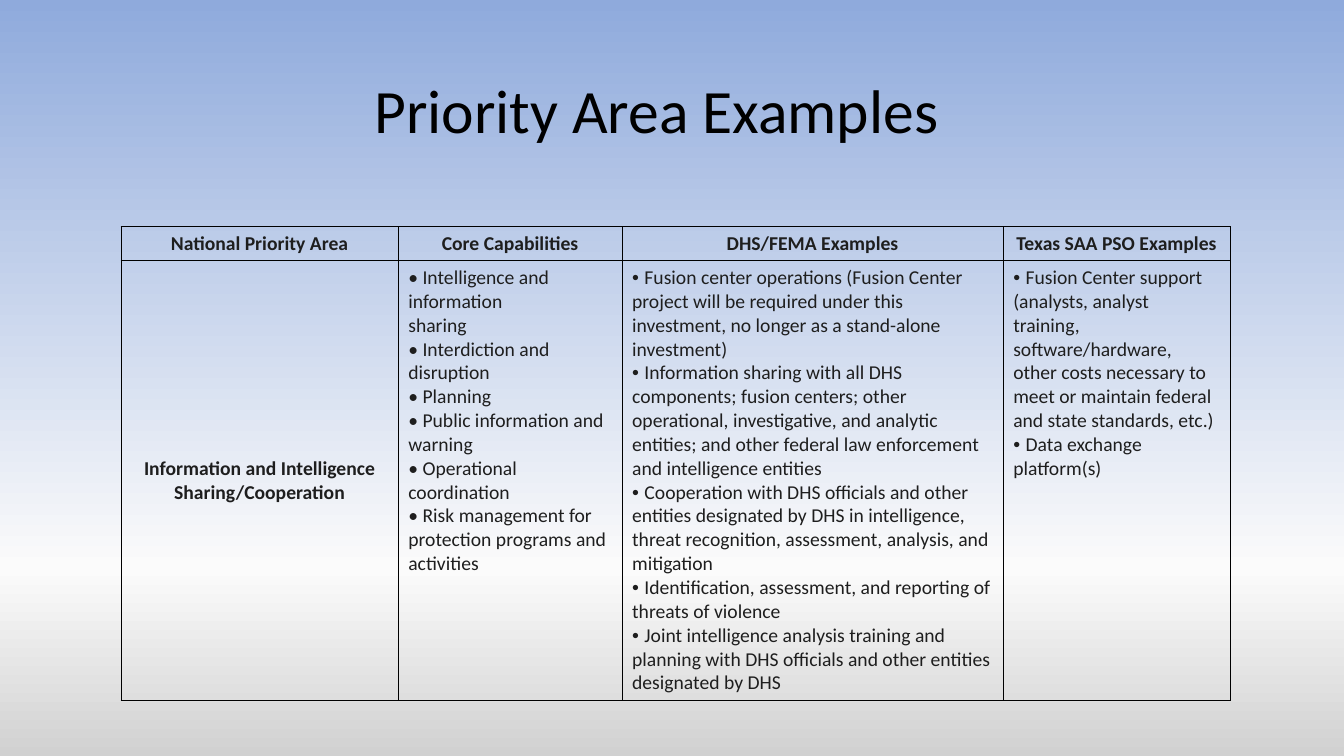
from copy import deepcopy
from lxml.etree import SubElement
from pptx import Presentation
from pptx.dml.color import RGBColor
from pptx.enum.text import MSO_ANCHOR, PP_ALIGN
from pptx.oxml.ns import qn
from pptx.util import Inches, Pt

TITLE = "Priority Area Examples"
HEADS = ["National Priority Area", "Core Capabilities", "DHS/FEMA Examples", "Texas SAA PSO Examples"]
AREA = ["Information and Intelligence", "Sharing/Cooperation"]
SKILLS = [
    "• Intelligence and information",
    "sharing",
    "• Interdiction and disruption",
    "• Planning",
    "• Public information and warning",
    "• Operational coordination",
    "• Risk management for protection programs and activities",
]
FEDERAL = [
    "• Fusion center operations (Fusion Center project will be required under this investment, "
    "no longer as a stand-alone investment)",
    "• Information sharing with all DHS components; fusion centers; other operational, investigative, "
    "and analytic entities; and other federal law enforcement and intelligence entities",
    "• Cooperation with DHS officials and other entities designated by DHS in intelligence, "
    "threat recognition, assessment, analysis, and mitigation",
    "• Identification, assessment, and reporting of threats of violence",
    "• Joint intelligence analysis training and planning with DHS officials and other entities designated by DHS",
]
STATE = [
    "• Fusion Center support (analysts, analyst training, software/hardware, "
    "other costs necessary to meet or maintain federal and state standards, etc.)",
    "• Data exchange platform(s)",
]
ROWS = [[[head] for head in HEADS], [AREA, SKILLS, FEDERAL, STATE]]
WIDTHS = [2.75, 2.22, 3.78, 2.25]
HEIGHTS = [0.33, 4.35]
MARKS = ["Calibri", "Calibri", "Arial", "Arial"]
COLORS = {"sky": "8FAADC", "white": "FBFBFB", "gray": "D1D1D1", "title": "000000", "text": "1E1E1E", "line": "000000"}
STOPS = [(0, "sky"), (0.75, "white"), (1, "gray")]
SIZE = 14


def add_run(para, text, size, color, font="Calibri", bold=False):
    run = para.add_run()
    run.text = text
    run.font.size = Pt(size)
    run.font.name = font
    run.font.bold = bold
    run.font.color.rgb = RGBColor.from_string(COLORS[color])


def paint_back(slide):
    fill = slide.background.fill
    fill.gradient()
    fill.gradient_angle = 270
    stops = slide.element.find(".//" + qn("a:gsLst"))
    stops.append(deepcopy(stops[-1]))
    for stop, (place, color) in zip(fill.gradient_stops, STOPS):
        stop.position = place
        stop.color.rgb = RGBColor.from_string(COLORS[color])


def add_border(cell):
    props = cell._tc.get_or_add_tcPr()
    for index, side in enumerate(["lnL", "lnR", "lnT", "lnB"]):
        line = props.makeelement(qn("a:" + side), {"w": str(Pt(0.5))})
        props.insert(index, line)
        SubElement(SubElement(line, qn("a:solidFill")), qn("a:srgbClr"), val=COLORS["line"])


def fill_cell(cell, lines, mark, bold):
    cell.fill.background()
    add_border(cell)
    cell.vertical_anchor = MSO_ANCHOR.MIDDLE if bold else MSO_ANCHOR.TOP
    para = cell.text_frame.paragraphs[0]
    para.alignment = PP_ALIGN.CENTER if bold else PP_ALIGN.LEFT
    for index, line in enumerate(lines):
        if index:
            para.add_line_break()
            SubElement(para._p[-1], qn("a:rPr"), sz=str(SIZE * 100))
        if line.startswith("• "):
            add_run(para, "• ", SIZE, "text", mark)
            line = line[2:]
        add_run(para, line, SIZE, "text", bold=bold)


def main():
    deck = Presentation()
    deck.slide_width, deck.slide_height = Inches(13.33), Inches(7.5)
    slide = deck.slides.add_slide(deck.slide_layouts[5])
    paint_back(slide)

    title = slide.shapes.title
    title.left, title.top, title.width, title.height = map(Inches, (1.75, 0.4, 9.53, 1.45))
    title.text_frame.vertical_anchor = MSO_ANCHOR.MIDDLE
    para = title.text_frame.paragraphs[0]
    para.alignment = PP_ALIGN.CENTER
    para.line_spacing = 0.9
    add_run(para, TITLE, 44, "title")

    frame = slide.shapes.add_table(
        len(ROWS), len(WIDTHS), Inches(1.2), Inches(2.25), Inches(sum(WIDTHS)), Inches(sum(HEIGHTS)))
    table = frame.table
    table.horz_banding = False
    for column, width in zip(table.columns, WIDTHS):
        column.width = Inches(width)
    for row, height in zip(table.rows, HEIGHTS):
        row.height = Inches(height)
    for r, row in enumerate(ROWS):
        for c, lines in enumerate(row):
            fill_cell(table.cell(r, c), lines, MARKS[c], r == 0 or c == 0)

    deck.save("out.pptx")


if __name__ == "__main__":
    main()
